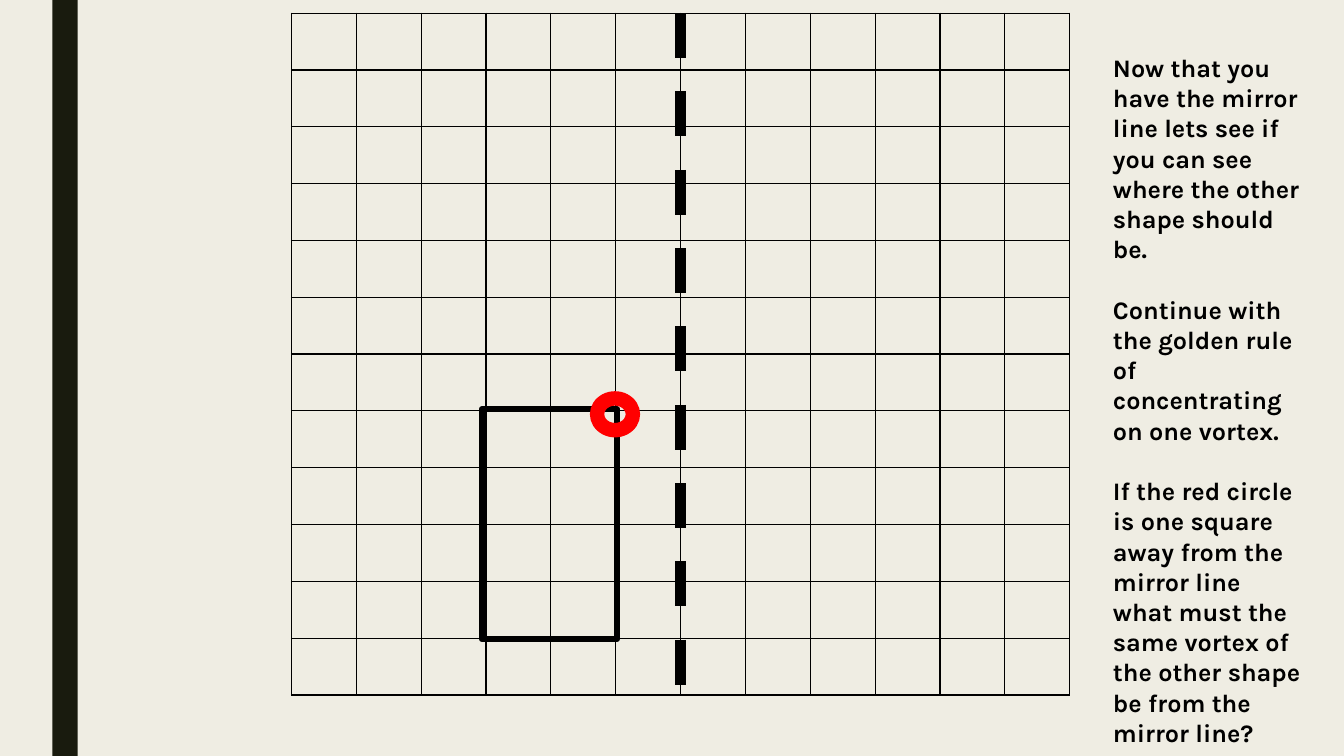
import lxml.etree
import pptx
import pptx.dml.color
import pptx.enum.dml
import pptx.enum.shapes
import pptx.enum.text
import pptx.oxml
import pptx.oxml.ns
import pptx.util

EMU_PER_PX = 9144  # 100 px to the inch
COLORS = {"background": "EFEDE3", "bar": "191B0E", "ink": "000000", "marker": "FF0000"}
FONT = "Karla"
GRID_SIZE = 12
PARAGRAPHS = [
    "Now that you have the mirror line lets see if you can see where the other shape should be.",
    "Continue with the golden rule of concentrating on one vortex.",
    "If the red circle is one square away from the mirror line what must the same vortex "
    "of the other shape be from the mirror line?",
]


def px(length):
    return pptx.util.Emu(round(length * EMU_PER_PX))


def color(name):
    return pptx.dml.color.RGBColor.from_string(COLORS[name])


def add_shape(slide, kind, box, fill=None, line=None, line_width=0):
    shape = slide.shapes.add_shape(kind, *map(px, box))
    shape.shadow.inherit = False
    if fill:
        shape.fill.solid()
        shape.fill.fore_color.rgb = color(fill)
    else:
        shape.fill.background()
    if line:
        shape.line.color.rgb = color(line)
        shape.line.width = pptx.util.Pt(line_width)
    else:
        shape.line.fill.background()
    return shape


def set_borders(cell):
    properties = cell._tc.get_or_add_tcPr()
    for position, side in enumerate(("lnL", "lnR", "lnT", "lnB")):
        border = pptx.oxml.parse_xml(
            f'<a:{side} {pptx.oxml.ns.nsdecls("a")} w="{pptx.util.Pt(1)}">'
            f'<a:solidFill><a:srgbClr val="{COLORS["ink"]}"/></a:solidFill></a:{side}>'
        )
        properties.insert(position, border)


def add_grid(slide, box):
    left, top, width, height = box
    table = slide.shapes.add_table(GRID_SIZE, GRID_SIZE, *map(px, box)).table
    table.first_row = False
    table.horz_banding = False
    for column in table.columns:
        column.width = px(width / GRID_SIZE)
    for row in table.rows:
        row.height = px(height / GRID_SIZE)
    for cell in table.iter_cells():
        cell.fill.background()
        set_borders(cell)


def add_mirror_line(slide, box):
    left, top, width, height = box
    center = left + width / 2
    line = slide.shapes.add_connector(
        pptx.enum.shapes.MSO_CONNECTOR.STRAIGHT,
        px(center), px(top), px(center), px(top + height),
    )
    line.line.color.rgb = color("ink")
    line.line.width = pptx.util.Pt(8)
    line.line.dash_style = pptx.enum.dml.MSO_LINE.DASH
    lxml.etree.SubElement(line._element.spPr, pptx.oxml.ns.qn("a:effectLst"))


def add_reflection_grid(slide, box):
    left, top, width, height = box
    shapes = pptx.enum.shapes.MSO_SHAPE
    add_grid(slide, box)
    # Shape to reflect
    add_shape(slide, shapes.RECTANGLE, (left + 189, top + 393, 134, 228),
              line="ink", line_width=4.5)
    add_mirror_line(slide, box)
    # Marked vertex
    add_shape(slide, shapes.DONUT, (left + 298, top + 377, 46, 42),
              fill="marker", line="marker", line_width=2.75)


def add_instructions(slide, box):
    frame = slide.shapes.add_textbox(*map(px, box)).text_frame
    frame.word_wrap = True
    frame.auto_size = pptx.enum.text.MSO_AUTO_SIZE.SHAPE_TO_FIT_TEXT
    for index, text in enumerate(PARAGRAPHS):
        paragraph = frame.add_paragraph() if index else frame.paragraphs[0]
        if index:
            paragraph.space_before = pptx.util.Pt(21.5)
        run = paragraph.add_run()
        run.text = text
        run.font.name = FONT
        run.font.size = pptx.util.Pt(18)
        run.font.bold = True
        run.font.color.rgb = color("ink")


def main():
    presentation = pptx.Presentation()
    presentation.slide_width = px(1333)
    presentation.slide_height = px(750)
    slide = presentation.slides.add_slide(presentation.slide_layouts[6])
    slide.background.fill.solid()
    slide.background.fill.fore_color.rgb = color("background")

    # Side bar
    add_shape(slide, pptx.enum.shapes.MSO_SHAPE.RECTANGLE, (52, 0, 25, 750), fill="bar")
    # Grid with the mirror line
    add_reflection_grid(slide, (289, 13, 772, 677))
    # Task text
    add_instructions(slide, (1094, 47, 207, 616))

    presentation.save("out.pptx")


if __name__ == "__main__":
    main()
